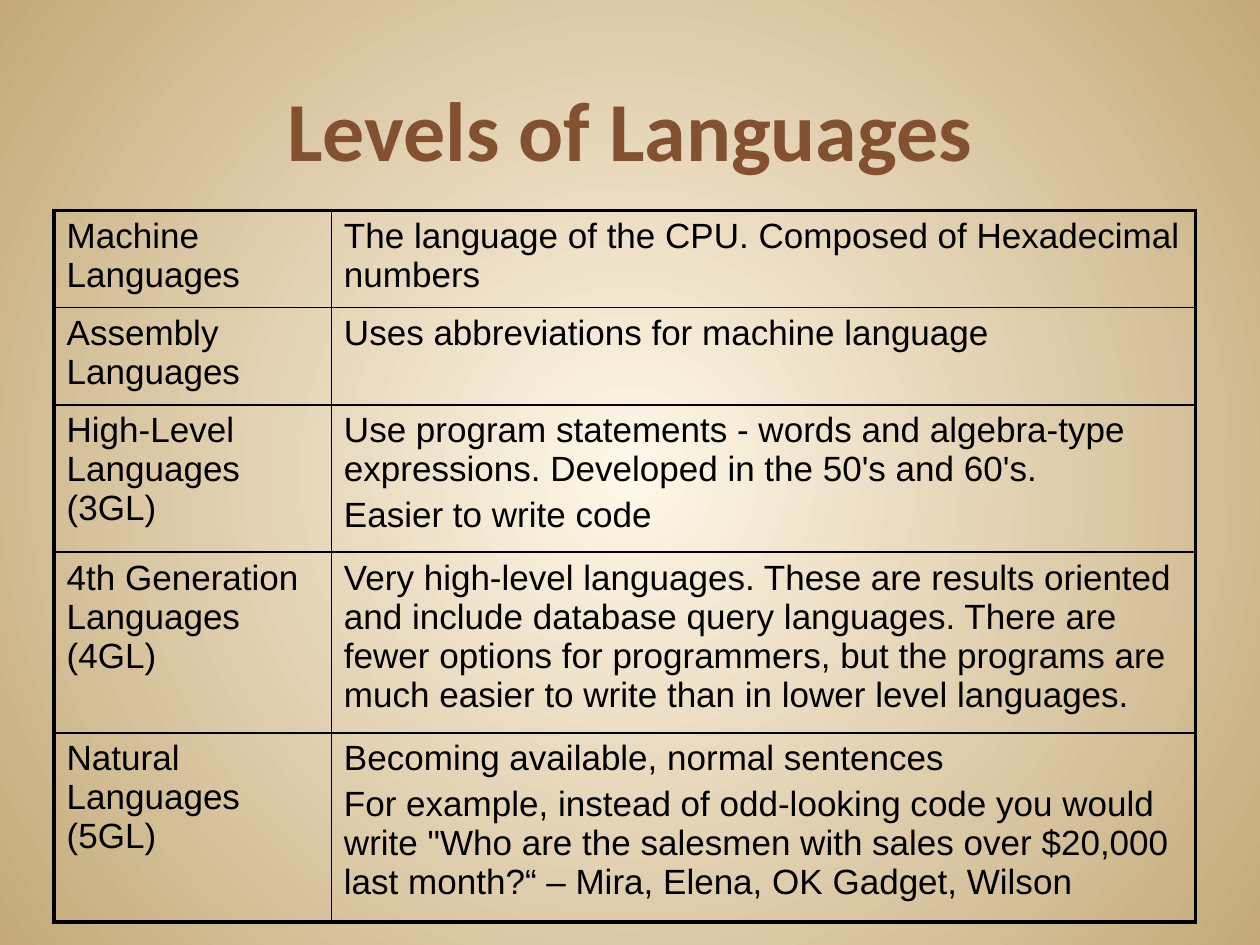
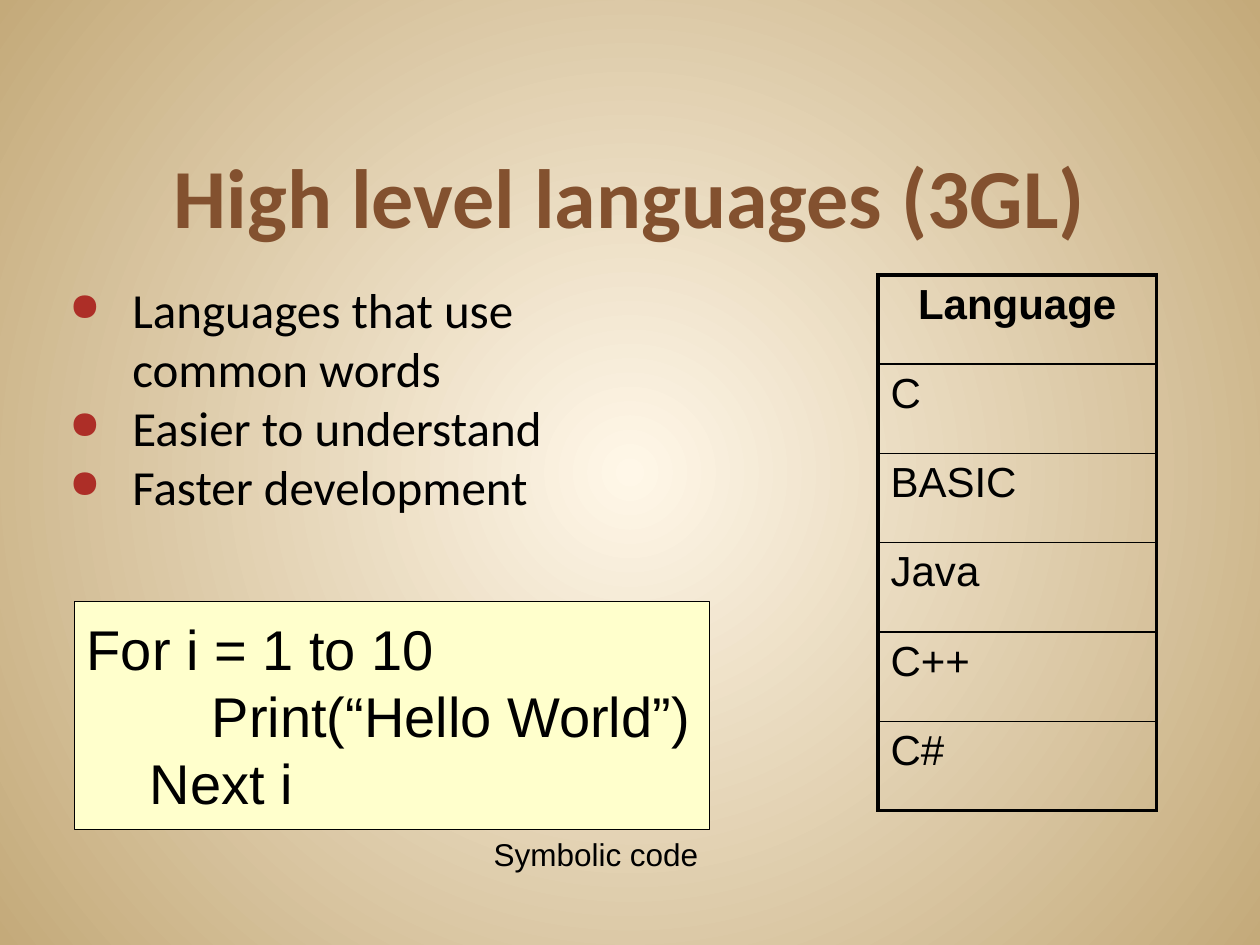
import dataclasses
import typing

import lxml.etree
import pptx
import pptx.dml.color
import pptx.enum.shapes
import pptx.enum.text
import pptx.oxml.ns
import pptx.shapes.autoshape
import pptx.slide
import pptx.table
import pptx.text.text
import pptx.util

Cm = pptx.util.Cm
Pt = pptx.util.Pt
qn = pptx.oxml.ns.qn
ALIGN = pptx.enum.text.PP_ALIGN
ANCHOR = pptx.enum.text.MSO_ANCHOR
AUTO = pptx.enum.text.MSO_AUTO_SIZE

BLACK, BROWN, RED = "000000", "83512F", "AD2E27"
CREAM, SAND, YELLOW = "FFF7E8", "C4AA7A", "FFFFCC"
THICK, THIN = 2.25, 1

TITLE = {"name": "Calibri", "size": Pt(48), "bold": True}
BULLET = {"name": "Calibri", "size": Pt(28)}
CODE = {"name": "Arial", "size": Pt(32)}
CAPTION = {"name": "Arial", "size": Pt(18)}
LEVEL_CELL = {"name": "Arial", "size": Pt(20), "bold": False}
NAME_CELL = {"name": "Arial", "size": Pt(24), "bold": False}
NAME_HEAD = {**NAME_CELL, "bold": True}

LEVELS = [
    ["Machine Languages",
     "The language of the CPU. Composed of Hexadecimal numbers"],
    ["Assembly Languages", "Uses abbreviations for machine language"],
    ["High-Level Languages (3GL)",
     "Use program statements - words and algebra-type expressions. "
     "Developed in the 50's and 60's.\nEasier to write code"],
    ["4th Generation Languages (4GL)",
     "Very high-level languages. These are results oriented and include "
     "database query languages. There are fewer options for programmers, but "
     "the programs are much easier to write than in lower level languages."],
    ["Natural Languages (5GL)",
     "Becoming available, normal sentences\n"
     "For example, instead of odd-looking code you would write \"Who are the "
     "salesmen with sales over $20,000 last month?“ – Mira, Elena, OK Gadget, "
     "Wilson"],
]
NAMES = [["Language"], ["C"], ["BASIC"], ["Java"], ["C++"], ["C#"]]


@dataclasses.dataclass
class Box:
    left: float
    top: float
    width: float
    height: float

    def place(self) -> typing.Tuple[int, ...]:
        return tuple(Cm(v) for v in dataclasses.astuple(self))


@dataclasses.dataclass
class Line:
    text: str
    indent: float = 0
    bullet: bool = False


@dataclasses.dataclass
class Grid:
    left: float
    top: float
    cols: typing.List[float]
    rows: typing.List[float]
    cells: typing.List[typing.List[str]]
    body: dict
    head: typing.Optional[dict] = None


def rgb(value: str) -> pptx.dml.color.RGBColor:
    return pptx.dml.color.RGBColor.from_string(value)


def apply(obj: typing.Any, fmt: dict) -> None:
    for key, value in fmt.items():
        setattr(obj, key, value)


def write(tf: pptx.text.text.TextFrame, lines: typing.List[Line], font: dict,
          color: str = BLACK, align: ALIGN = ALIGN.LEFT, gap: float = 0) -> None:
    for i, line in enumerate(lines):
        p = tf.add_paragraph() if i else tf.paragraphs[0]
        p.alignment = align
        if i:
            p.space_before = Pt(gap)
        r = p.add_run()
        r.text = line.text
        apply(r.font, font)
        r.font.color.rgb = rgb(color)
        if line.indent:
            pPr = p._p.get_or_add_pPr()
            pPr.set("marL", str(Cm(line.indent)))
            pPr.set("indent", str(-Cm(line.indent) if line.bullet else 0))
        if line.bullet:
            clr = lxml.etree.SubElement(pPr, qn("a:buClr"))
            lxml.etree.SubElement(clr, qn("a:srgbClr"), val=RED)
            lxml.etree.SubElement(pPr, qn("a:buSzPct"), val="80000")
            lxml.etree.SubElement(pPr, qn("a:buChar"), char="●")


def add_text(s: pptx.slide.Slide, box: Box, lines: typing.List[Line],
             font: dict, frame: dict, **style: typing.Any) -> None:
    tf = s.shapes.add_textbox(*box.place()).text_frame
    apply(tf, {"word_wrap": True, **frame})
    write(tf, lines, font, **style)


def add_title(s: pptx.slide.Slide, text: str, height: float) -> None:
    add_text(s, Box(1.27, 1.27, 22.86, height), [Line(text)], TITLE,
             {"vertical_anchor": ANCHOR.BOTTOM}, color=BROWN, align=ALIGN.CENTER)


def add_code(s: pptx.slide.Slide, box: Box, lines: typing.List[Line]) -> None:
    sp = s.shapes.add_shape(pptx.enum.shapes.MSO_SHAPE.RECTANGLE, *box.place())
    sp.shadow.inherit = False
    sp.fill.solid()
    sp.fill.fore_color.rgb = rgb(YELLOW)
    sp.line.color.rgb = rgb(BLACK)
    sp.line.width = Pt(0.75)
    apply(sp.text_frame, {"word_wrap": True, "vertical_anchor": ANCHOR.MIDDLE})
    write(sp.text_frame, lines, CODE)


def add_border(cell: pptx.table._Cell, side: str, width: float) -> None:
    tcPr = cell._tc.get_or_add_tcPr()
    ln = lxml.etree.SubElement(tcPr, qn(f"a:ln{side}"), w=str(Pt(width)))
    fill = lxml.etree.SubElement(ln, qn("a:solidFill"))
    lxml.etree.SubElement(fill, qn("a:srgbClr"), val=BLACK)


def add_grid(s: pptx.slide.Slide, grid: Grid) -> None:
    rows, cols = len(grid.rows), len(grid.cols)
    box = Box(grid.left, grid.top, sum(grid.cols), sum(grid.rows))
    tbl = s.shapes.add_table(rows, cols, *box.place()).table
    apply(tbl, {"first_row": False, "horz_banding": False})
    for col, width in zip(tbl.columns, grid.cols):
        col.width = Cm(width)
    for row, height in zip(tbl.rows, grid.rows):
        row.height = Cm(height)
    for i, texts in enumerate(grid.cells):
        for j, text in enumerate(texts):
            cell = tbl.cell(i, j)
            outer = {"L": j == 0, "R": j == cols - 1,
                     "T": i == 0, "B": i == rows - 1}
            for side, is_outer in outer.items():
                add_border(cell, side, THICK if is_outer else THIN)
            cell.fill.background()
            is_head = i == 0 and grid.head is not None
            font = grid.head if is_head else grid.body
            write(cell.text_frame, [Line(t) for t in text.split("\n")], font,
                  align=ALIGN.CENTER if is_head else ALIGN.LEFT,
                  gap=font["size"].pt * 0.2)


def set_background(master: pptx.slide.SlideMaster) -> None:
    fill = master.background.fill
    fill.gradient()
    for stop, color in zip(fill.gradient_stops, (CREAM, SAND)):
        stop.color.rgb = rgb(color)
    grad = next(master.element.iter(qn("a:gradFill")))
    for lin in grad.findall(qn("a:lin")):
        grad.remove(lin)
    circle = lxml.etree.Element(qn("a:path"), path="circle")
    lxml.etree.SubElement(circle, qn("a:fillToRect"),
                          {side: "50000" for side in "ltrb"})
    grad.find(qn("a:gsLst")).addnext(circle)


def build_levels(s: pptx.slide.Slide) -> None:
    add_title(s, "Levels of Languages", 2.46)
    add_grid(s, Grid(1.09, 4.24, [5.59, 17.42], [1.96, 1.96, 2.97, 3.63, 3.81],
                     LEVELS, LEVEL_CELL))


def build_high_level(s: pptx.slide.Slide) -> None:
    add_title(s, "High level languages (3GL)", 3.81)
    points = ["Languages that use common words", "Easier to understand",
              "Faster development"]
    margins = {f"margin_{side}": Cm(0.13)
               for side in ("left", "top", "right", "bottom")}
    add_text(s, Box(1.27, 5.51, 11.23, 10.8),
             [Line(t, 1.27, True) for t in points], BULLET, margins)
    add_grid(s, Grid(17.7, 5.54, [5.61], [1.8] * len(NAMES), NAMES,
                     NAME_CELL, NAME_HEAD))
    add_code(s, Box(1.5, 12.12, 12.8, 4.6),
             [Line("For i = 1 to 10"), Line("Print(“Hello World”)", 2.52),
              Line("Next i", 1.27)])
    add_text(s, Box(9.7, 16.71, 4.65, 1.02), [Line("Symbolic code")], CAPTION,
             {"word_wrap": False, "auto_size": AUTO.SHAPE_TO_FIT_TEXT})


def main() -> None:
    prs = pptx.Presentation()
    apply(prs, {"slide_width": Cm(25.4), "slide_height": Cm(19.05)})
    set_background(prs.slide_master)
    for build in (build_levels, build_high_level):
        build(prs.slides.add_slide(prs.slide_layouts[6]))
    prs.save("out.pptx")


if __name__ == "__main__":
    main()
